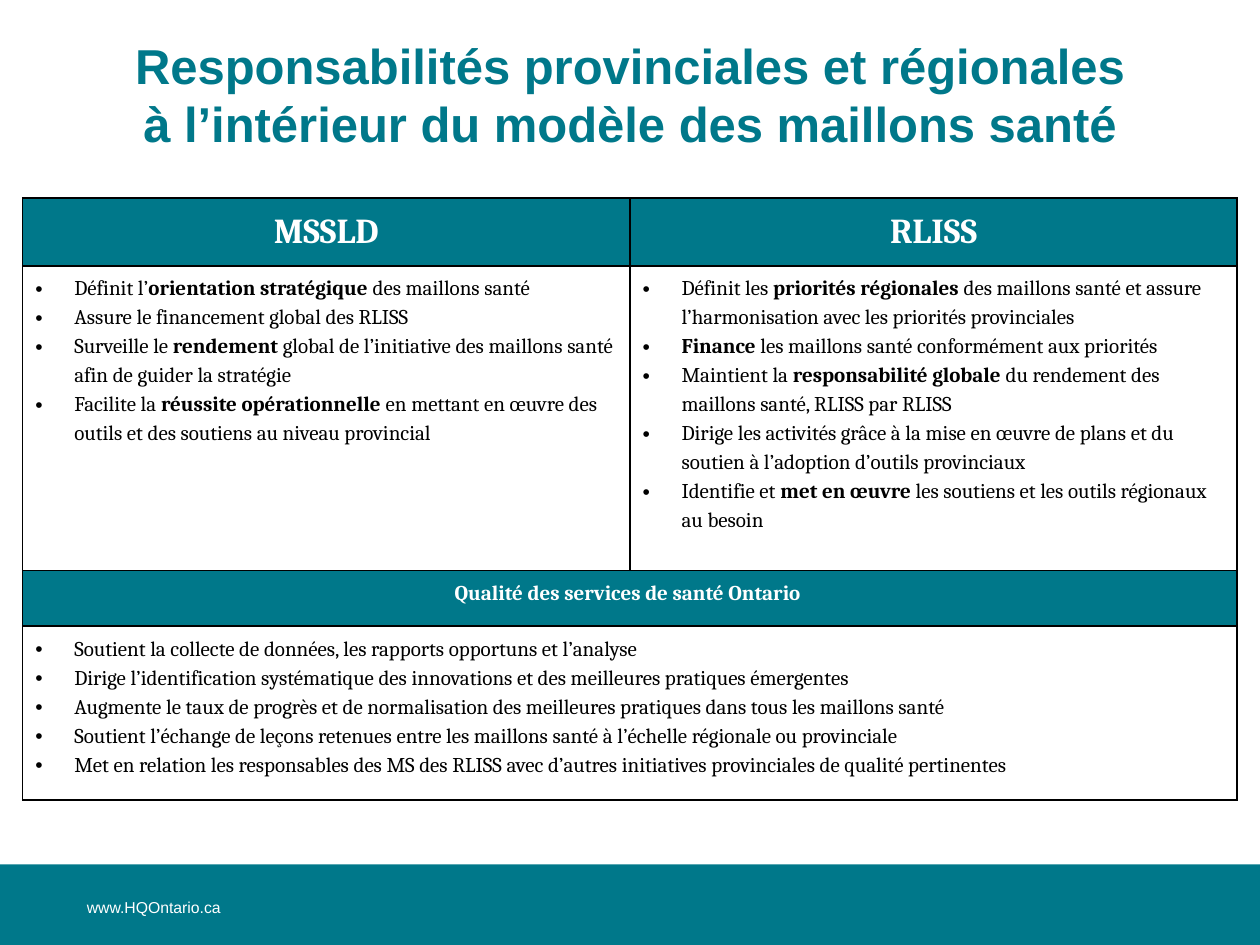
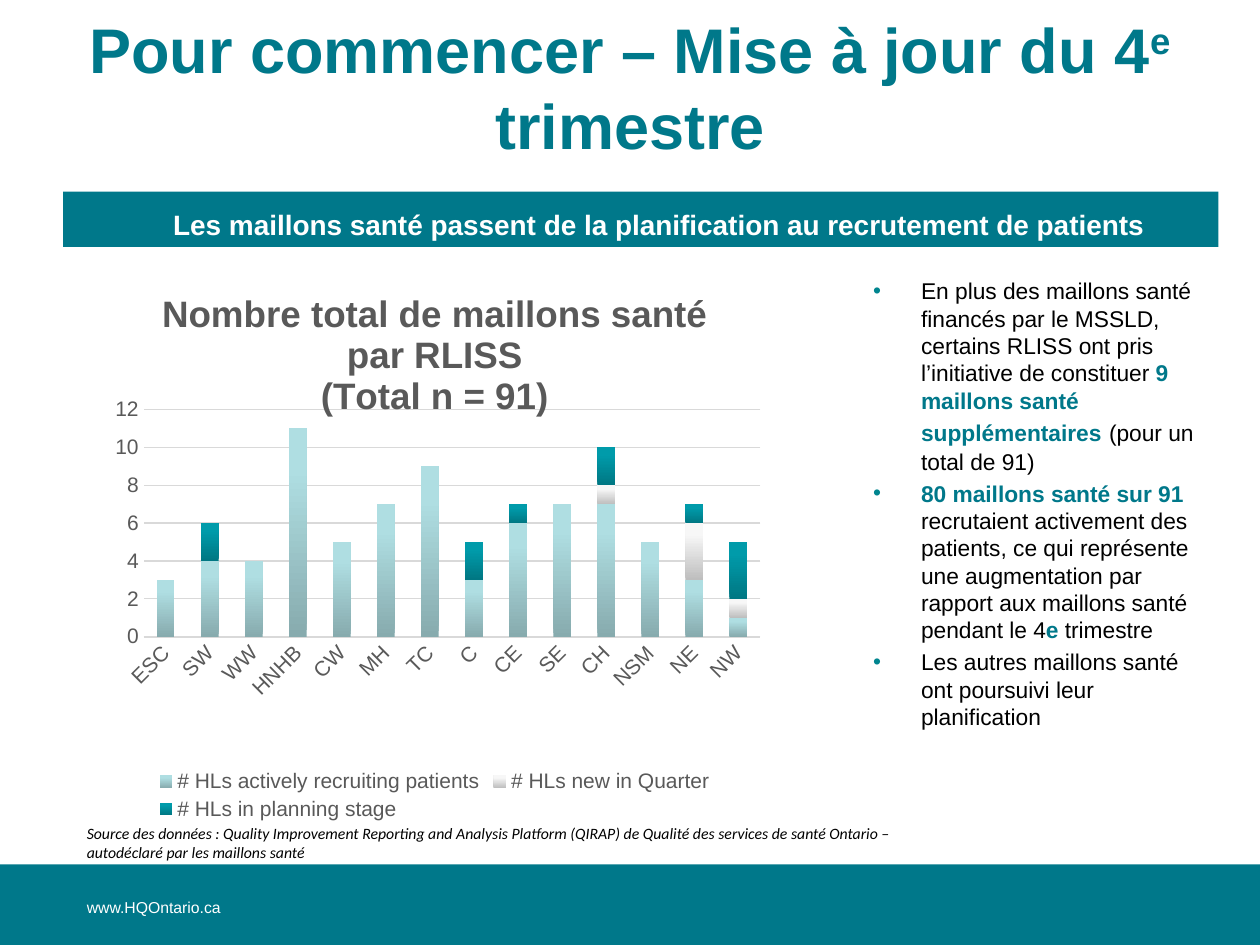
from copy import deepcopy

from pptx import Presentation
from pptx.chart.data import CategoryChartData
from pptx.dml.color import RGBColor
from pptx.enum.chart import XL_CHART_TYPE, XL_LEGEND_POSITION, XL_TICK_MARK
from pptx.enum.shapes import MSO_SHAPE
from pptx.enum.text import MSO_ANCHOR, MSO_AUTO_SIZE, PP_ALIGN
from pptx.oxml import parse_xml
from pptx.oxml.ns import nsdecls
from pptx.util import Inches, Pt

CENTER = PP_ALIGN.CENTER
MIDDLE, BOTTOM, TOP = MSO_ANCHOR.MIDDLE, MSO_ANCHOR.BOTTOM, MSO_ANCHOR.TOP
NO_TICK = XL_TICK_MARK.NONE
TITLE_ONLY, TWO_CONTENT = 5, 3

TEAL = RGBColor(0x00, 0x78, 0x8A)
BULLET_TEAL = RGBColor(0x00, 0x85, 0x8F)
WHITE = RGBColor(0xFF, 0xFF, 0xFF)
BLACK = RGBColor(0x00, 0x00, 0x00)
GRAY = RGBColor(0x59, 0x59, 0x59)
LIGHT_GRAY = RGBColor(0xD9, 0xD9, 0xD9)


def font_format(name, size, color, bold=False, italic=False):
    return {"name": name, "size": Pt(size), "color": color, "bold": bold, "italic": italic}


# Text styles
TITLE = font_format("Arial", 28, TEAL, bold=True)
LARGE_TITLE = font_format("Arial", 36, TEAL, bold=True)
FOOTER = font_format("Arial", 9, WHITE)
BANNER = font_format("Arial", 16, WHITE, bold=True)
LIST = font_format("Arial", 13, BLACK)
SOURCE = font_format("Calibri", 9, BLACK, italic=True)
TABLE_HEAD = font_format("Cambria", 20, WHITE, bold=True)
TABLE_BAND = font_format("Cambria", 12, WHITE, bold=True)
TABLE_BODY = font_format("Cambria", 12, BLACK)
CHART_TITLE = font_format("Arial", 21, GRAY, bold=True)
CHART_LABEL = font_format("Arial", 12, GRAY)
BOLD = {"bold": True}
ACCENT = {"bold": True, "color": TEAL}
SUPERSCRIPT = {"baseline": 30000}
WIDE_SPACE = {"size": Pt(16)}

# Content: a paragraph is a list of strings and (string, change of format) pairs
FOOTER_TEXT = [["www.HQOntario.ca"]]

ROLES_TITLE = [["Responsabilités provinciales et régionales\nà l’intérieur du modèle des maillons santé"]]
MINISTRY_ROLES = [
    ["Définit l’", ("orientation stratégique", BOLD), " des maillons santé"],
    ["Assure le financement global des RLISS"],
    ["Surveille le ", ("rendement", BOLD),
     " global de l’initiative des maillons santé afin de guider la stratégie"],
    ["Facilite la ", ("réussite opérationnelle", BOLD),
     " en mettant en œuvre des outils et des soutiens au niveau provincial"],
]
REGION_ROLES = [
    ["Définit les ", ("priorités régionales", BOLD),
     " des maillons santé et assure l’harmonisation avec les priorités provinciales"],
    [("Finance", BOLD), " les maillons santé conformément aux priorités"],
    ["Maintient la ", ("responsabilité globale", BOLD),
     " du rendement des maillons santé, RLISS par RLISS"],
    ["Dirige les activités grâce à la mise en œuvre de plans et du soutien "
     "à l’adoption d’outils provinciaux"],
    ["Identifie et ", ("met en œuvre", BOLD),
     " les soutiens et les outils régionaux au besoin"],
]
QUALITY_ROLES = [
    ["Soutient la collecte de données, les rapports opportuns et l’analyse"],
    ["Dirige l’identification systématique des innovations et des meilleures pratiques émergentes"],
    ["Augmente le taux de progrès et de normalisation des meilleures pratiques "
     "dans tous les maillons santé"],
    ["Soutient l’échange de leçons retenues entre les maillons santé "
     "à l’échelle régionale ou provinciale"],
    ["Met en relation les responsables des MS des RLISS avec d’autres initiatives "
     "provinciales de qualité pertinentes"],
]
# Row height, cell contents (one content spans the row), format, fill
ROLE_ROWS = [
    (0.54, [[["MSSLD"]], [["RLISS"]]], TABLE_HEAD, TEAL),
    (2.42, [MINISTRY_ROLES, REGION_ROLES], TABLE_BODY, None),
    (0.44, [[["Qualité des services de santé Ontario "]]], TABLE_BAND, TEAL),
    (1.38, [QUALITY_ROLES], TABLE_BODY, None),
]

QUARTER_TITLE = [["Pour commencer – Mise à jour du 4", ("e", SUPERSCRIPT), " trimestre"]]
QUARTER_BANNER = [["Les maillons santé passent de la planification au recrutement de patients"]]
QUARTER_POINTS = [
    ["En plus des maillons santé financés par le MSSLD, certains RLISS ont pris "
     "l’initiative de constituer ", ("9 maillons santé supplémentaires", ACCENT),
     (" ", WIDE_SPACE), "(pour un total de 91)"],
    [("80 maillons santé sur 91", ACCENT),
     " recrutaient activement des patients, ce qui représente une augmentation "
     "par rapport aux maillons santé pendant le 4", ("e", ACCENT), " trimestre"],
    ["Les autres maillons santé ont poursuivi leur planification"],
]
SOURCE_TEXT = [["Source des données : Quality Improvement Reporting and Analysis Platform (QIRAP) "
                "de Qualité des services de santé Ontario – autodéclaré par les maillons santé"]]
LINKS_TITLE = [["Nombre total de maillons santé par RLISS"], ["(Total n = 91)"]]
REGIONS = ["ESC", "SW", "WW", "HNHB", "CW", "MH", "TC", "C", "CE", "SE", "CH", "NSM", "NE", "NW"]
# Series name, values, gradient colours at 0, 80 and 100 %
LINK_SERIES = [
    ("# HLs actively recruiting patients", [3, 4, 4, 11, 5, 7, 9, 3, 6, 7, 7, 5, 3, 1],
     ("87ABAE", "AFDEE2", "AFE0E4")),
    ("# HLs new in Quarter", [None] * 10 + [1, None, 3, 1], ("BEBEBE", "F7F7F7", "F8F8F8")),
    ("# HLs in planning stage", [0, 2, 0, 0, 0, 0, 0, 2, 1, 0, 2, 0, 1, 3],
     ("007783", "009BAA", "009CAA")),
]
PLOT_AREA = {"x": 0.08, "y": 0.25, "w": 0.89, "h": 0.41}


# Shared helpers
def box(left, top, width, height):
    return [Inches(length) for length in (left, top, width, height)]


def set_font(font, values):
    for name, value in values.items():
        if name == "color":
            font.color.rgb = value
        elif name != "baseline":
            setattr(font, name, value)


def add_run(paragraph, text, values):
    for index, line in enumerate(text.split("\n")):
        if index:
            paragraph.add_line_break()
            paragraph._p[-1].append(deepcopy(run._r.rPr))
        run = paragraph.add_run()
        run.text = line
        set_font(run.font, values)
        if "baseline" in values:
            run._r.rPr.set("baseline", str(values["baseline"]))


def set_bullet(paragraph, indent, color):
    properties = paragraph._p.get_or_add_pPr()
    properties.set("marL", str(Inches(indent)))
    properties.set("indent", str(-Inches(indent)))
    if not indent:
        properties.append(parse_xml(f"<a:buNone {nsdecls('a')}/>"))
        return
    properties.append(parse_xml(f'<a:buClr {nsdecls("a")}><a:srgbClr val="{color}"/></a:buClr>'))
    properties.append(parse_xml(f'<a:buFont {nsdecls("a")} typeface="Arial"/>'))
    properties.append(parse_xml(f'<a:buChar {nsdecls("a")} char="•"/>'))


def write(text_frame, paragraphs, values, align=None, line_spacing=1.0, gap=0,
          indent=0, bullet_color=BLACK):
    for index, pieces in enumerate(paragraphs):
        paragraph = text_frame.add_paragraph() if index else text_frame.paragraphs[0]
        set_bullet(paragraph, indent, bullet_color)
        paragraph.alignment = align
        paragraph.line_spacing = line_spacing
        paragraph.space_before = Pt(gap if index else 0)
        for piece in pieces:
            text, change = (piece, {}) if isinstance(piece, str) else piece
            add_run(paragraph, text, {**values, **change})


def place(shape, position, anchor, left_inset=0.1):
    shape.left, shape.top, shape.width, shape.height = position
    frame = shape.text_frame
    frame.word_wrap = True
    frame.auto_size = MSO_AUTO_SIZE.NONE
    frame.vertical_anchor = anchor
    frame.margin_left = Inches(left_inset)
    return frame


def add_text(slide, position, paragraphs, values, anchor=TOP):
    text_box = slide.shapes.add_textbox(*position)
    write(place(text_box, position, anchor), paragraphs, values)


def add_base_slide(presentation, layout, title, title_format, title_height):
    slide = presentation.slides.add_slide(presentation.slide_layouts[layout])
    frame = place(slide.shapes.title, box(0.5, 0.3, 9, title_height), MIDDLE)
    write(frame, title, title_format, CENTER)
    band = slide.shapes.add_shape(MSO_SHAPE.RECTANGLE, *box(0, 6.86, 10, 0.64))
    band.shadow.inherit = False
    band.fill.solid()
    band.fill.fore_color.rgb = TEAL
    band.line.fill.background()
    add_text(slide, box(0.59, 7.08, 3.08, 0.27), FOOTER_TEXT, FOOTER)
    return slide


# Table of responsibilities
def format_cell(cell, fill):
    properties = cell._tc.get_or_add_tcPr()
    for side in "LRTB":
        properties.append(parse_xml(
            f'<a:ln{side} {nsdecls("a")} w="{Pt(1)}"><a:solidFill>'
            f'<a:srgbClr val="{BLACK}"/></a:solidFill></a:ln{side}>'))
    if fill is None:
        cell.fill.background()
    else:
        cell.fill.solid()
        cell.fill.fore_color.rgb = fill


def add_roles_table(slide):
    height = sum(row[0] for row in ROLE_ROWS)
    table = slide.shapes.add_table(len(ROLE_ROWS), 2, *box(0.18, 1.57, 9.64, height)).table
    table.first_row = table.horz_banding = False
    for row, (height, contents, values, fill) in enumerate(ROLE_ROWS):
        table.rows[row].height = Inches(height)
        for column in range(2):
            format_cell(table.cell(row, column), fill)
        if len(contents) == 1:
            table.cell(row, 0).merge(table.cell(row, 1))
        for column, paragraphs in enumerate(contents):
            write(table.cell(row, column).text_frame, paragraphs, values,
                  align=CENTER if fill else None, line_spacing=1.2, indent=0 if fill else 0.31)


# Stacked column chart
def set_gradient(series, colors):
    stops = "".join(f'<a:gs pos="{position}000"><a:srgbClr val="{color}"/></a:gs>'
                    for position, color in zip((0, 80, 100), colors))
    series._element.get_or_add_spPr().append(parse_xml(
        f'<a:gradFill {nsdecls("a")} rotWithShape="1"><a:gsLst>{stops}</a:gsLst>'
        '<a:lin ang="16200000" scaled="0"/></a:gradFill>'))


def set_plot_area(chart):
    plot_area = chart._chartSpace.chart.plotArea
    for layout in plot_area.xpath("c:layout"):
        plot_area.remove(layout)
    modes = '<c:xMode val="edge"/><c:yMode val="edge"/>'
    sizes = "".join(f'<c:{name} val="{value}"/>' for name, value in PLOT_AREA.items())
    plot_area.insert(0, parse_xml(
        f'<c:layout {nsdecls("c")}><c:manualLayout><c:layoutTarget val="inner"/>'
        f'{modes}{sizes}</c:manualLayout></c:layout>'))


def add_links_chart(slide):
    data = CategoryChartData()
    data.categories = REGIONS
    for name, values, _ in LINK_SERIES:
        data.add_series(name, values)
    chart = slide.shapes.add_chart(
        XL_CHART_TYPE.COLUMN_STACKED, *box(0.7, 2.15, 5.5, 4.4), data).chart
    set_font(chart.font, CHART_LABEL)
    write(chart.chart_title.text_frame, LINKS_TITLE, CHART_TITLE, CENTER)
    chart.has_legend = True
    chart.legend.position = XL_LEGEND_POSITION.BOTTOM
    chart.legend.include_in_layout = False
    set_font(chart.legend.font, CHART_LABEL)
    plot = chart.plots[0]
    plot.gap_width, plot.overlap, plot.vary_by_categories = 150, 100, False
    for series, (_, _, colors) in zip(plot.series, LINK_SERIES):
        set_gradient(series, colors)
    for axis in (chart.category_axis, chart.value_axis):
        axis.major_tick_mark = axis.minor_tick_mark = NO_TICK
        set_font(axis.tick_labels.font, CHART_LABEL)
    chart.category_axis._element.txPr.bodyPr.set("rot", "-2700000")
    values_axis = chart.value_axis
    values_axis.minimum_scale, values_axis.maximum_scale, values_axis.major_unit = 0, 12, 2
    values_axis.format.line.fill.background()
    for line, width in ((chart.category_axis.format.line, 1),
                        (values_axis.major_gridlines.format.line, 0.75)):
        line.color.rgb = LIGHT_GRAY
        line.width = Pt(width)
    set_plot_area(chart)


def main():
    presentation = Presentation()
    presentation.slide_width, presentation.slide_height = Inches(10), Inches(7.5)

    # Responsibilities
    slide = add_base_slide(presentation, TITLE_ONLY, ROLES_TITLE, TITLE, 0.89)
    add_roles_table(slide)

    # Quarterly update
    slide = add_base_slide(presentation, TWO_CONTENT, QUARTER_TITLE, LARGE_TITLE, 0.77)
    banner, points = slide.placeholders[1], slide.placeholders[2]
    write(place(banner, box(0.5, 1.52, 9.17, 0.44), BOTTOM, 0.39), QUARTER_BANNER, BANNER, CENTER)
    banner.fill.solid()
    banner.fill.fore_color.rgb = TEAL
    write(place(points, box(6.54, 2.15, 3.12, 4.28), TOP, 0.39), QUARTER_POINTS, LIST,
          gap=2.6, indent=0.38, bullet_color=BULLET_TEAL)
    add_links_chart(slide)
    add_text(slide, box(0.59, 6.56, 6.95, 0.25), SOURCE_TEXT, SOURCE, MIDDLE)

    presentation.save("out.pptx")


if __name__ == "__main__":
    main()
